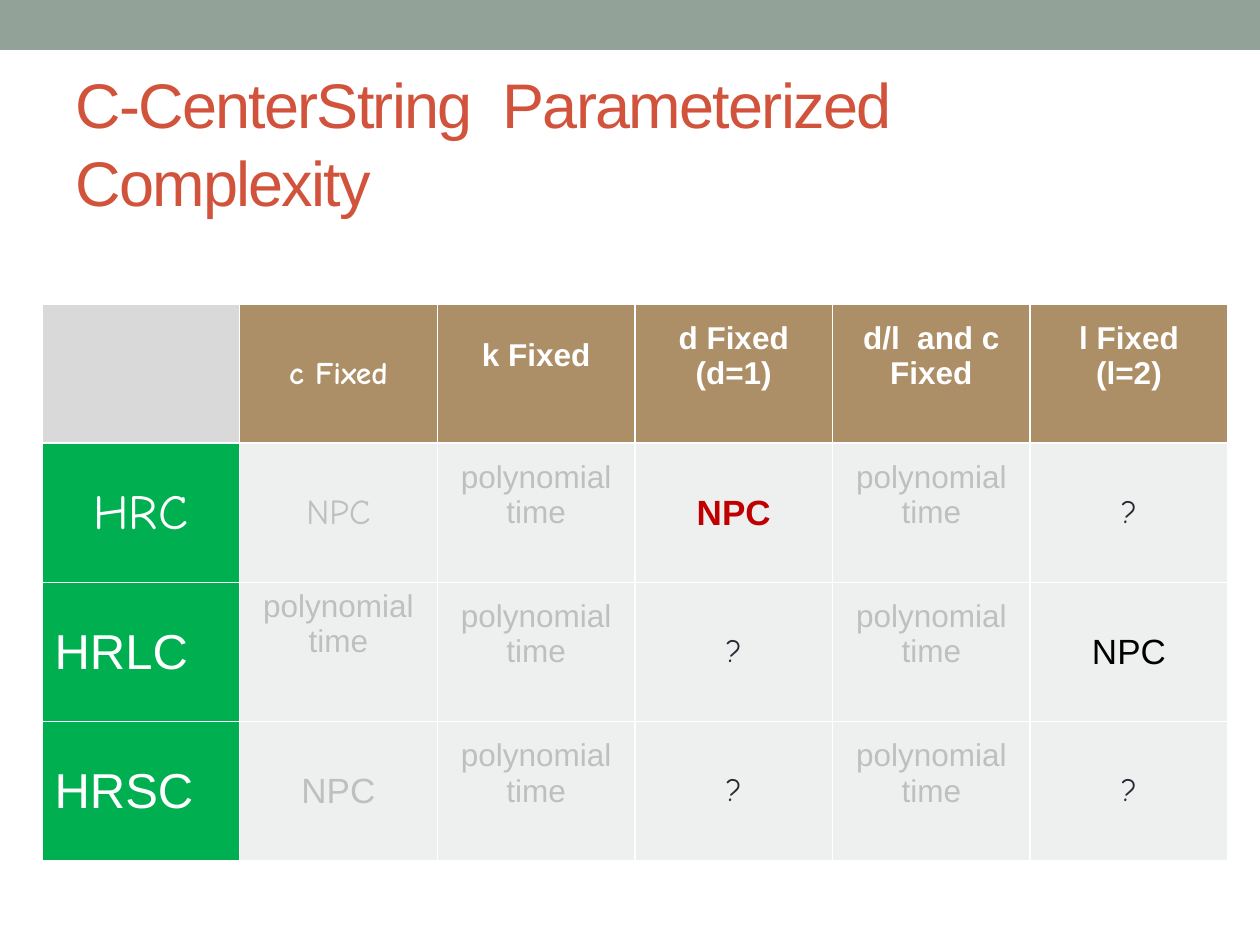
import dataclasses

import pptx
import pptx.dml.color
import pptx.enum.shapes
import pptx.enum.text
import pptx.util

EMU_PER_PX = 914400 / 126


@dataclasses.dataclass(frozen=True)
class TextStyle:
    size: int
    color: str
    font: str = "Arial"
    bold: bool = False
    align: str = "CENTER"
    anchor: str = "MIDDLE"
    bottom: int = 6


@dataclasses.dataclass(frozen=True)
class Theme:
    band: str = "93A299"
    corner: str = "D9D9D9"
    header: str = "AD8F67"
    label: str = "00B050"
    body: str = "EEF0EF"
    title: TextStyle = TextStyle(36, "D2533C", align="LEFT")
    column_script: TextStyle = TextStyle(18, "FFFFFF", "Comic Neue", True)
    column: TextStyle = TextStyle(18, "FFFFFF", bold=True, bottom=42)
    row_script: TextStyle = TextStyle(28, "FFFFFF", "Comic Neue")
    row: TextStyle = TextStyle(28, "FFFFFF", align="LEFT")
    known_script: TextStyle = TextStyle(20, "BFBFBF", "Comic Neue")
    known: TextStyle = TextStyle(20, "BFBFBF")
    easy: TextStyle = TextStyle(18, "BFBFBF", bottom=42)
    easy_top: TextStyle = TextStyle(18, "BFBFBF", anchor="TOP")
    hard: TextStyle = TextStyle(20, "C00000", bold=True)
    result: TextStyle = TextStyle(20, "000000")
    unknown: TextStyle = TextStyle(18, "292934", "Comic Neue")


THEME = Theme()
EASY = ("polynomial time", THEME.easy)
OPEN = ("?", THEME.unknown)

ROWS = [
    [
        ("", THEME.column),
        ("c Fixed", THEME.column_script),
        ("k Fixed", THEME.column),
        ("d Fixed\v(d=1)", THEME.column),
        ("d/l  and c Fixed", THEME.column),
        ("l Fixed\n(l=2)", THEME.column),
    ],
    [("HRC", THEME.row_script), ("NPC", THEME.known_script), EASY,
     ("NPC", THEME.hard), EASY, OPEN],
    [("HRLC", THEME.row), ("polynomial time", THEME.easy_top), EASY,
     OPEN, EASY, ("NPC", THEME.result)],
    [("HRSC", THEME.row), ("NPC", THEME.known), EASY, OPEN, EASY, OPEN],
]


def px(length):
    return pptx.util.Emu(round(length * EMU_PER_PX))


def paint(fill, color):
    fill.solid()
    fill.fore_color.rgb = pptx.dml.color.RGBColor.from_string(color)


def write(frame, text, style):
    frame.text = text
    for para in frame.paragraphs:
        para.alignment = getattr(pptx.enum.text.PP_ALIGN, style.align)
        para.font.size = pptx.util.Pt(style.size)
        para.font.name = style.font
        para.font.bold = style.bold
        para.font.color.rgb = pptx.dml.color.RGBColor.from_string(style.color)


def add_band(page, left, top, width, height):
    band = page.shapes.add_shape(
        pptx.enum.shapes.MSO_SHAPE.RECTANGLE,
        px(left), px(top), px(width), px(height))
    band.shadow.inherit = False
    paint(band.fill, THEME.band)
    band.line.fill.background()


def add_title(page, left, top, width, height):
    box = page.shapes.add_textbox(px(left), px(top), px(width), px(height))
    frame = box.text_frame
    frame.word_wrap = True
    frame.vertical_anchor = pptx.enum.text.MSO_ANCHOR.MIDDLE
    write(frame, "C-CenterString  Parameterized Complexity", THEME.title)
    para = frame.paragraphs[0]
    para.line_spacing = 1.03
    para.runs[0].font._element.set("spc", "-100")


def cell_color(row, column):
    if row == 0:
        return THEME.header if column else THEME.corner
    return THEME.body if column else THEME.label


def add_complexity_table(page, left, top, width, height):
    table = page.shapes.add_table(
        len(ROWS), len(ROWS[0]),
        px(left), px(top), px(width), px(height)).table
    for column in table.columns:
        column.width = px(width / len(ROWS[0]))
    for row in table.rows:
        row.height = px(height / len(ROWS))
    for row_index, entries in enumerate(ROWS):
        for column_index, (text, style) in enumerate(entries):
            cell = table.cell(row_index, column_index)
            paint(cell.fill, cell_color(row_index, column_index))
            cell.vertical_anchor = getattr(
                pptx.enum.text.MSO_ANCHOR, style.anchor)
            cell.margin_bottom = px(style.bottom)
            write(cell.text_frame, text, style)


def main():
    deck = pptx.Presentation()
    deck.slide_width, deck.slide_height = px(1260), px(945)
    page = deck.slides.add_slide(deck.slide_layouts[6])
    add_band(page, 0, 0, 1260, 50)
    add_title(page, 63, 73, 1134, 136)
    add_complexity_table(page, 42, 304, 1186, 557)
    deck.save("out.pptx")


if __name__ == "__main__":
    main()
